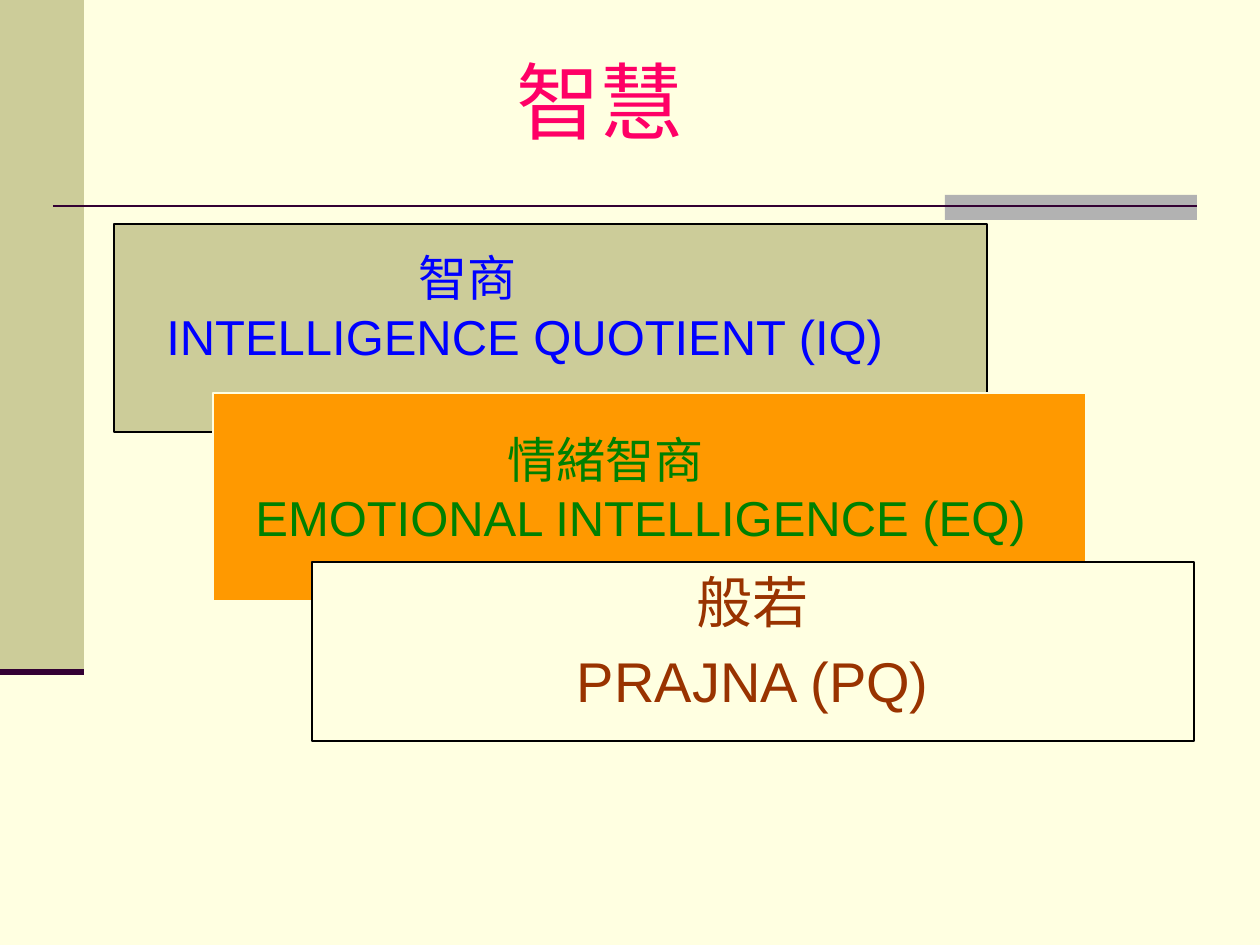
from dataclasses import dataclass
from typing import Optional

from lxml import etree
from pptx import Presentation
from pptx.dml.color import RGBColor
from pptx.enum.shapes import MSO_CONNECTOR, MSO_SHAPE
from pptx.enum.text import MSO_ANCHOR, MSO_AUTO_SIZE, PP_ALIGN
from pptx.oxml.ns import qn
from pptx.util import Emu, Pt

RECT = MSO_SHAPE.RECTANGLE
STRAIGHT = MSO_CONNECTOR.STRAIGHT
TOP, MIDDLE = MSO_ANCHOR.TOP, MSO_ANCHOR.MIDDLE
LEFT, CENTER = PP_ALIGN.LEFT, PP_ALIGN.CENTER
NO_FIT = MSO_AUTO_SIZE.NONE

CREAM = RGBColor(0xFF, 0xFF, 0xE1)
KHAKI = RGBColor(0xCC, 0xCC, 0x99)
GRAY = RGBColor(0xB2, 0xB2, 0xB2)
PLUM = RGBColor(0x33, 0x00, 0x33)
ORANGE = RGBColor(0xFF, 0x99, 0x00)
BLACK = RGBColor(0x00, 0x00, 0x00)
PINK = RGBColor(0xFF, 0x00, 0x66)
BLUE = RGBColor(0x00, 0x00, 0xFF)
GREEN = RGBColor(0x00, 0x80, 0x00)
BROWN = RGBColor(0x99, 0x33, 0x00)

PX_PER_INCH = 126
HEADING_INDENT = 2 * PX_PER_INCH


def px(n: int) -> Emu:
    return Emu(round(n * 914400 / PX_PER_INCH))


@dataclass
class Box:
    x: int
    y: int
    w: int
    h: int
    fill: RGBColor
    line: Optional[RGBColor] = None


@dataclass
class Rule:
    x1: int
    x2: int
    y: int
    weight: float


@dataclass
class Label:
    x: int
    y: int
    w: int
    h: int
    lines: list[str]
    size: int
    color: RGBColor
    font: str = "Arial"
    align: PP_ALIGN = LEFT
    anchor: MSO_ANCHOR = TOP
    inset_top: int = 6
    wrap: bool = True


SIDEBAR = [Box(0, 0, 84, 672, KHAKI), Box(945, 195, 252, 25, GRAY)]
RULES = [Rule(53, 1197, 206, 1.5), Rule(0, 84, 672, 3.5)]
CARDS = [Box(114, 224, 873, 208, KHAKI, BLACK),
         Box(213, 393, 873, 208, ORANGE, CREAM)]
CARD_LABELS = [
    Label(154, 234, 743, 139, ["智商", "INTELLIGENCE QUOTIENT (IQ)"],
          28, BLUE, inset_top=14, wrap=False),
    Label(243, 423, 799, 130, ["情緒智商", "EMOTIONAL INTELLIGENCE (EQ)"],
          28, GREEN, wrap=False),
]
TITLE = Label(491, 45, 218, 110, ["智慧"], 48, PINK,
              "Times New Roman", CENTER, MIDDLE)
PRAJNA = Label(312, 562, 882, 179, ["般若", "PRAJNA (PQ)"], 32, BROWN,
               align=CENTER)


def add_box(s, box: Box) -> None:
    sp = s.shapes.add_shape(RECT, px(box.x), px(box.y), px(box.w), px(box.h))
    sp.shadow.inherit = False
    sp.fill.solid()
    sp.fill.fore_color.rgb = box.fill
    if box.line is None:
        sp.line.fill.background()
    else:
        sp.line.color.rgb = box.line
        sp.line.width = Pt(0.75)


def add_rule(s, rule: Rule) -> None:
    line = s.shapes.add_connector(STRAIGHT, px(rule.x1), px(rule.y),
                                  px(rule.x2), px(rule.y))
    line.line.color.rgb = PLUM
    line.line.width = Pt(rule.weight)
    etree.SubElement(line._element.spPr, qn("a:effectLst"))


def write_text(sp, label: Label) -> None:
    tf = sp.text_frame
    frame = {"word_wrap": label.wrap, "auto_size": NO_FIT,
             "vertical_anchor": label.anchor, "margin_top": px(label.inset_top)}
    for name, value in frame.items():
        setattr(tf, name, value)
    font = {"name": label.font, "size": Pt(label.size), "bold": False}
    for i, text in enumerate(label.lines):
        p = tf.paragraphs[0] if i == 0 else tf.add_paragraph()
        p.alignment = label.align
        r = p.add_run()
        r.text = text
        r.font.color.rgb = label.color
        for name, value in font.items():
            setattr(r.font, name, value)


def add_card_label(s, label: Label) -> None:
    sp = s.shapes.add_textbox(px(label.x), px(label.y), px(label.w), px(label.h))
    write_text(sp, label)
    heading = sp.text_frame.paragraphs[0]._p.get_or_add_pPr()
    heading.set("marL", str(px(HEADING_INDENT)))


def place_placeholder(s, sp, label: Label) -> None:
    """Move the placeholder to its place, in front of what is drawn so far."""
    bounds = {"left": label.x, "top": label.y,
              "width": label.w, "height": label.h}
    for name, value in bounds.items():
        setattr(sp, name, px(value))
    write_text(sp, label)
    s.shapes._spTree.append(sp._element)


def main() -> None:
    prs = Presentation()
    prs.slide_width, prs.slide_height = px(1260), px(945)
    s = prs.slides.add_slide(prs.slide_layouts[0])
    s.background.fill.solid()
    s.background.fill.fore_color.rgb = CREAM
    title, subtitle = s.placeholders

    for box in SIDEBAR:
        add_box(s, box)
    for rule in RULES:
        add_rule(s, rule)
    place_placeholder(s, title, TITLE)
    for box in CARDS:
        add_box(s, box)
    for label in CARD_LABELS:
        add_card_label(s, label)
    place_placeholder(s, subtitle, PRAJNA)
    subtitle.fill.solid()
    subtitle.fill.fore_color.rgb = CREAM
    subtitle.line.color.rgb = BLACK
    subtitle.line.width = Pt(0.75)

    prs.save("out.pptx")


if __name__ == "__main__":
    main()
